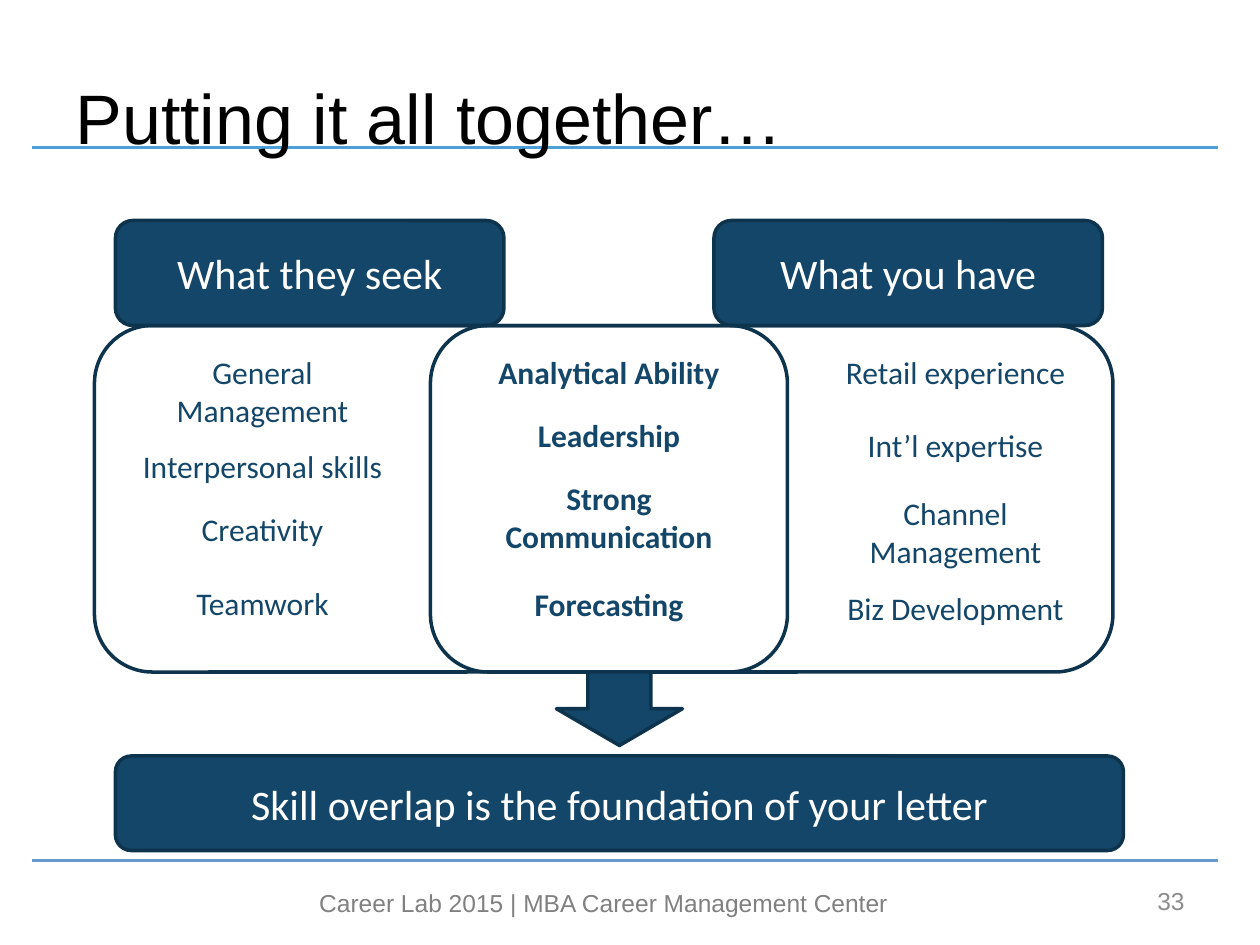
"""Build the skill-overlap slide for a cover letter workshop."""
import pptx
import pptx.dml.color
import pptx.enum.shapes
import pptx.enum.text
import pptx.oxml.ns
import pptx.util
from lxml import etree

Pt = pptx.util.Pt
SHAPE = pptx.enum.shapes.MSO_SHAPE
ALIGN = pptx.enum.text.PP_ALIGN
ANCHOR = pptx.enum.text.MSO_ANCHOR
NAVY, OUTLINE = "134668", "0E344D"


def color(hex_value):
    return pptx.dml.color.RGBColor.from_string(hex_value)


def write(shape, text, font_name, size, hex_value, align, anchor, bold=False):
    frame = shape.text_frame
    frame.word_wrap = True
    frame.auto_size = pptx.enum.text.MSO_AUTO_SIZE.NONE
    frame.vertical_anchor = anchor
    para = frame.paragraphs[0]
    para.text = text
    para.alignment = align
    para.font.name = font_name
    para.font.size = Pt(size)
    para.font.bold = bold
    para.font.color.rgb = color(hex_value)


deck = pptx.Presentation()
deck.slide_width, deck.slide_height = Pt(720), Pt(540)
slide = deck.slides.add_slide(deck.slide_layouts[5])
shapes = slide.shapes

for y, hex_value in [(491.8, "6699CC"), (84.2, "4DA0D7")]:
    rule = shapes.add_connector(
        pptx.enum.shapes.MSO_CONNECTOR.STRAIGHT, Pt(18), Pt(y), Pt(696), Pt(y))
    rule.line.color.rgb = color(hex_value)
    rule.line.width = Pt(2)
    etree.SubElement(rule.element.spPr, pptx.oxml.ns.qn("a:effectLst"))

title = shapes.title
title.left, title.top, title.width, title.height = Pt(36), Pt(21.6), Pt(648), Pt(90)
write(title, "Putting it all together…", "Arial", 40, "000000", ALIGN.LEFT, ANCHOR.MIDDLE)
title.element.getparent().append(title.element)

footer = shapes.add_textbox(Pt(174), Pt(504), Pt(342), Pt(24.5))
write(footer, "Career Lab 2015 | MBA Career Management Center",
      "Arial", 14, "808080", ALIGN.CENTER, ANCHOR.TOP)
number = shapes.add_textbox(Pt(516), Pt(500.5), Pt(168), Pt(28.8))
write(number, "33", "Arial", 14, "8C8C8C", ALIGN.RIGHT, ANCHOR.MIDDLE)

blocks = [
    (SHAPE.ROUNDED_RECTANGLE, 66, 126, 222, 60, NAVY, "What they seek"),
    (SHAPE.ROUNDED_RECTANGLE, 408, 126, 222, 60, NAVY, "What you have"),
    (SHAPE.ROUNDED_RECTANGLE, 54, 186, 396, 198, None, ""),
    (SHAPE.ROUNDED_RECTANGLE, 246, 186, 390, 198, None, ""),
    (SHAPE.DOWN_ARROW, 318, 384, 72, 42, NAVY, ""),
    (SHAPE.ROUNDED_RECTANGLE, 66, 432, 576, 54, NAVY,
     "Skill overlap is the foundation of your letter"),
]
for kind, left, top, width, height, fill, text in blocks:
    block = shapes.add_shape(kind, Pt(left), Pt(top), Pt(width), Pt(height))
    block.shadow.inherit = False
    block.line.color.rgb = color(OUTLINE)
    block.line.width = Pt(2)
    if fill:
        block.fill.solid()
        block.fill.fore_color.rgb = color(fill)
    else:
        block.fill.background()
    if text:
        write(block, text, "Calibri", 24, "FFFFFF", ALIGN.CENTER, ANCHOR.MIDDLE)

columns = [
    (264, True, [("Analytical Ability", 198, 30), ("Leadership", 234, 30),
                 ("Strong Communication", 270, 51), ("Forecasting", 331, 29)]),
    (66, False, [("General Management", 198, 51), ("Interpersonal skills", 252, 30),
                 ("Creativity", 288, 29), ("Teamwork", 330, 29)]),
    (462, False, [("Retail experience", 198, 29), ("Int’l expertise", 240, 30),
                  ("Channel Management", 279, 51), ("Biz Development", 333, 29)]),
]
for left, bold, skills in columns:
    for text, top, height in skills:
        skill = shapes.add_textbox(Pt(left), Pt(top), Pt(168), Pt(height))
        write(skill, text, "Calibri", 18, NAVY, ALIGN.CENTER, ANCHOR.TOP, bold)

deck.save("out.pptx")
